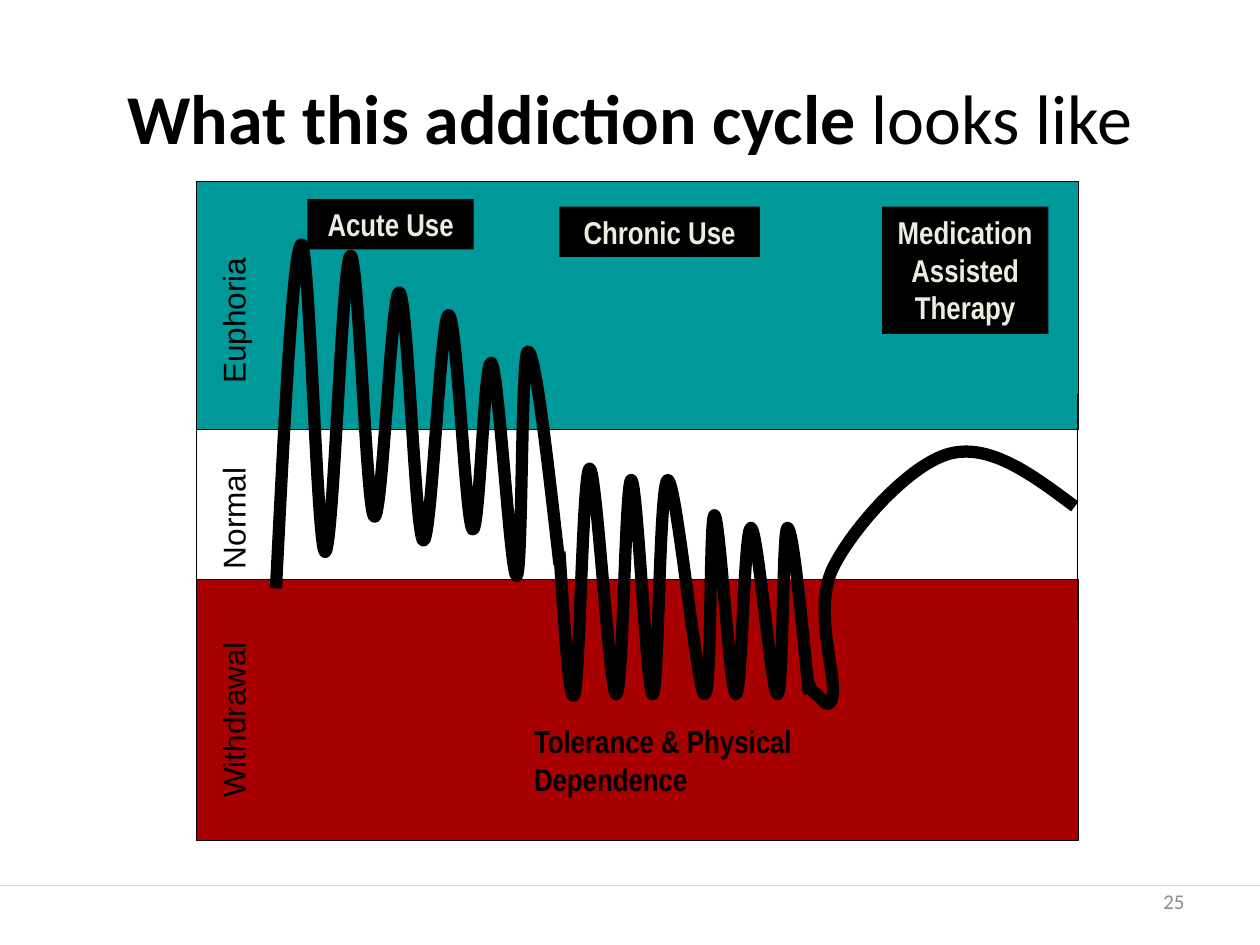
from collections import namedtuple
from lxml import etree
from pptx import Presentation
from pptx.dml.color import RGBColor
from pptx.enum.shapes import MSO_CONNECTOR, MSO_SHAPE
from pptx.enum.text import MSO_ANCHOR, MSO_AUTO_SIZE, PP_ALIGN
from pptx.oxml.ns import qn
from pptx.util import Inches, Pt

RECTANGLE = MSO_SHAPE.RECTANGLE
STRAIGHT = MSO_CONNECTOR.STRAIGHT
LEFT, CENTER, RIGHT = PP_ALIGN.LEFT, PP_ALIGN.CENTER, PP_ALIGN.RIGHT
TOP, MIDDLE = MSO_ANCHOR.TOP, MSO_ANCHOR.MIDDLE
FIT_SHAPE, NO_FIT = MSO_AUTO_SIZE.SHAPE_TO_FIT_TEXT, MSO_AUTO_SIZE.NONE

BLACK = RGBColor(0x00, 0x00, 0x00)
TEAL = RGBColor(0x00, 0x99, 0x99)
DARK_RED = RGBColor(0xA8, 0x00, 0x00)
CREAM = RGBColor(0xEE, 0xEC, 0xE1)
GREY = RGBColor(0x8C, 0x8C, 0x8C)
PALE_GREY = RGBColor(0xD9, 0xD9, 0xD9)

TITLE_FONT = {"name": "Calibri", "size": Pt(40)}
NUMBER_FONT = {"name": "Calibri", "size": Pt(12)}
LEVEL_FONT = {"name": "Arial", "size": Pt(18)}
STAGE_FONT = {"name": "Arial Narrow", "size": Pt(18), "bold": True}

THIN, THICK = Pt(0.75), Pt(7)
LINE_HEIGHT = 0.4

Level = namedtuple("Level", "name middle length")
Stage = namedtuple("Stage", "lines x y width height")
Pulse = namedtuple("Pulse", "rise peak fall trough")

LEVELS = (Level("Withdrawal", 4.17, 1.64), Level("Normal", 2.6, 1.15), Level("Euphoria", 1.02, 1.37))
STAGES = (
    Stage(("Medication Assisted", "Therapy"), 5.44, 0.2, 1.32, 1.01),
    Stage(("Chronic Use",), 2.88, 0.2, 1.59, LINE_HEIGHT),
    Stage(("Acute Use",), 0.88, 0.14, 1.32, LINE_HEIGHT),
)

ACUTE_START = (0.63, 3.23)
ACUTE_HIGHS_AND_LOWS = ((0.5, 2.94), (0.59, 2.66), (0.88, 2.85), (1.06, 2.76))
ACUTE_PULSES = [Pulse(0.2, high, 0.19, low) for high, low in ACUTE_HIGHS_AND_LOWS]
ACUTE_PULSES += [Pulse(0.15, 1.44, 0.2, 3.13), Pulse(0.09, 1.35, 0.25, 3.04)]

WITHDRAWAL_LOW = 4.07
CHRONIC_START, CHRONIC_FIRST_LOW = (2.88, 2.94), (3, WITHDRAWAL_LOW)
CHRONIC_RISES = (0.12, 0.12, 0.12, 0.08, 0.12, 0.08)
CHRONIC_PEAKS = (2.28, 2.37, 2.37, 2.65, 2.75, 2.75)
CHRONIC_FALLS = (0.21, 0.17, 0.29, 0.17, 0.21, 0.17)
CHRONIC_PULSES = [Pulse(rise, peak, fall, WITHDRAWAL_LOW)
                  for rise, peak, fall in zip(CHRONIC_RISES, CHRONIC_PEAKS, CHRONIC_FALLS)]

THERAPY_RECOVERY = [(4.86, 3.99), (4.92, WITHDRAWAL_LOW), (5.05, WITHDRAWAL_LOW),
                    (5.05, 3.07), (5.98, 2.16), (6.97, 2.58)]


def write(shape, paragraphs, font, color, align=LEFT, anchor=TOP, fit=FIT_SHAPE):
    frame = shape.text_frame
    for name, value in {"word_wrap": True, "auto_size": fit, "vertical_anchor": anchor}.items():
        setattr(frame, name, value)
    for index, runs in enumerate(paragraphs):
        paragraph = frame.add_paragraph() if index else frame.paragraphs[0]
        paragraph.alignment = align
        for text, extra in runs:
            run = paragraph.add_run()
            run.text = text
            for name, value in {**font, **extra}.items():
                setattr(run.font, name, value)
            run.font.color.rgb = color


def add_text(slide, box, paragraphs, font, color, **layout):
    area = slide.shapes.add_textbox(*map(Inches, box))
    write(area, paragraphs, font, color, **layout)
    return area


def add_block(slide, box, fill):
    block = slide.shapes.add_shape(RECTANGLE, *map(Inches, box))
    block.shadow.inherit = False
    block.fill.solid()
    block.fill.fore_color.rgb = fill
    return block


def draw_line(shape, color, width):
    shape.line.color.rgb = color
    shape.line.width = width


def add_rule(slide, start, end, color):
    rule = slide.shapes.add_connector(STRAIGHT, *map(Inches, (*start, *end)))
    draw_line(rule, color, THIN)
    etree.SubElement(rule._element.spPr, qn("a:effectLst"))


def turning_points(knots, pulses):
    points = list(knots)
    for pulse in pulses:
        for step, height in ((pulse.rise, pulse.peak), (pulse.fall, pulse.trough)):
            points.append((points[-1][0] + step, height))
    return points


def midpoint(a, b):
    return (a[0] + b[0]) / 2, (a[1] + b[1]) / 2


def smooth_segments(points):
    handles = [((after[0] - before[0]) / 6, (after[1] - before[1]) / 6)
               for before, after in zip(points, points[2:])]
    leaving = [(x + dx, y + dy) for (x, y), (dx, dy) in zip(points[1:], handles)]
    arriving = [(x - dx, y - dy) for (x, y), (dx, dy) in zip(points[1:], handles)]
    leaving.insert(0, midpoint(points[0], arriving[0]))
    arriving.append(midpoint(leaving[-1], points[-1]))
    return zip(leaving, arriving, points[1:])


def add_smooth_curve(slide, origin, points):
    left, top = origin

    def place(point):
        return Inches(left + point[0]), Inches(top + point[1])

    builder = slide.shapes.build_freeform(*place(points[0]))
    builder.add_line_segments([place(point) for segment in smooth_segments(points) for point in segment], close=False)
    curve = builder.convert_to_shape()
    curve.shadow.inherit = False
    curve.fill.background()
    draw_line(curve, BLACK, THICK)
    outline = curve._element.find(".//" + qn("a:path"))
    vertices = outline.findall(qn("a:lnTo"))
    for first in range(0, len(vertices), 3):
        bezier = etree.SubElement(outline, qn("a:cubicBezTo"))
        for vertex in vertices[first:first + 3]:
            bezier.append(vertex[0])
            outline.remove(vertex)


def add_title(slide, box):
    runs = [("What this addiction cycle ", {"bold": True}), ("looks like", {})]
    add_text(slide, box, [runs], TITLE_FONT, BLACK, align=CENTER, anchor=MIDDLE, fit=NO_FIT)


def add_footer(slide, box):
    left, top, width, height = box
    add_rule(slide, (left, top + 0.08), (left + width, top + 0.08), PALE_GREY)
    add_text(slide, (left + 7.17, top, 2.33, height), [[("25", {})]], NUMBER_FONT, GREY,
             align=RIGHT, anchor=MIDDLE, fit=NO_FIT)


def add_levels(slide, box):
    left, top, width, height = box
    euphoria_depth, withdrawal_depth = 1.97, 2.07
    for offset, depth, fill in ((0, euphoria_depth, TEAL),
                                (height - withdrawal_depth, withdrawal_depth, DARK_RED)):
        band = add_block(slide, (left, top + offset, width, depth), fill)
        draw_line(band, BLACK, THIN)
    for level in LEVELS:
        place = (left + 0.29 - level.length / 2, top + level.middle - LINE_HEIGHT / 2, level.length, LINE_HEIGHT)
        add_text(slide, place, [[(level.name, {})]], LEVEL_FONT, BLACK).rotation = 270
    for x, start, end in ((left, 1.7, 3.39), (left + width - 0.01, 1.69, 3.48)):
        add_rule(slide, (x, top + start), (x, top + end), BLACK)


def add_use_curves(slide, box):
    acute_use = turning_points([ACUTE_START], ACUTE_PULSES)
    chronic_use = turning_points([CHRONIC_START, CHRONIC_FIRST_LOW], CHRONIC_PULSES)
    for points in (acute_use, chronic_use, THERAPY_RECOVERY):
        add_smooth_curve(slide, box[:2], points)


def add_stages(slide, box):
    left, top, width, height = box
    add_text(slide, (left + 2.58, top + 4.24, 2.36, 0.71),
             [[("Tolerance & Physical Dependence", {})]], STAGE_FONT, BLACK)
    for stage in STAGES:
        label = add_block(slide, (left + stage.x, top + stage.y, stage.width, stage.height), BLACK)
        label.line.fill.background()
        write(label, [[(line, {})] for line in stage.lines], STAGE_FONT, CREAM, align=CENTER)


def main():
    presentation = Presentation()
    presentation.slide_width, presentation.slide_height = Inches(10), Inches(7.5)
    slide = presentation.slides.add_slide(presentation.slide_layouts[6])
    add_footer(slide, (0, 6.95, 10, LINE_HEIGHT))
    add_title(slide, (0.5, 0.3, 9, 1.25))
    cycle_box = (1.56, 1.44, 7, 5.23)
    for add_part in (add_levels, add_use_curves, add_stages):
        add_part(slide, cycle_box)
    presentation.save("out.pptx")


if __name__ == "__main__":
    main()
